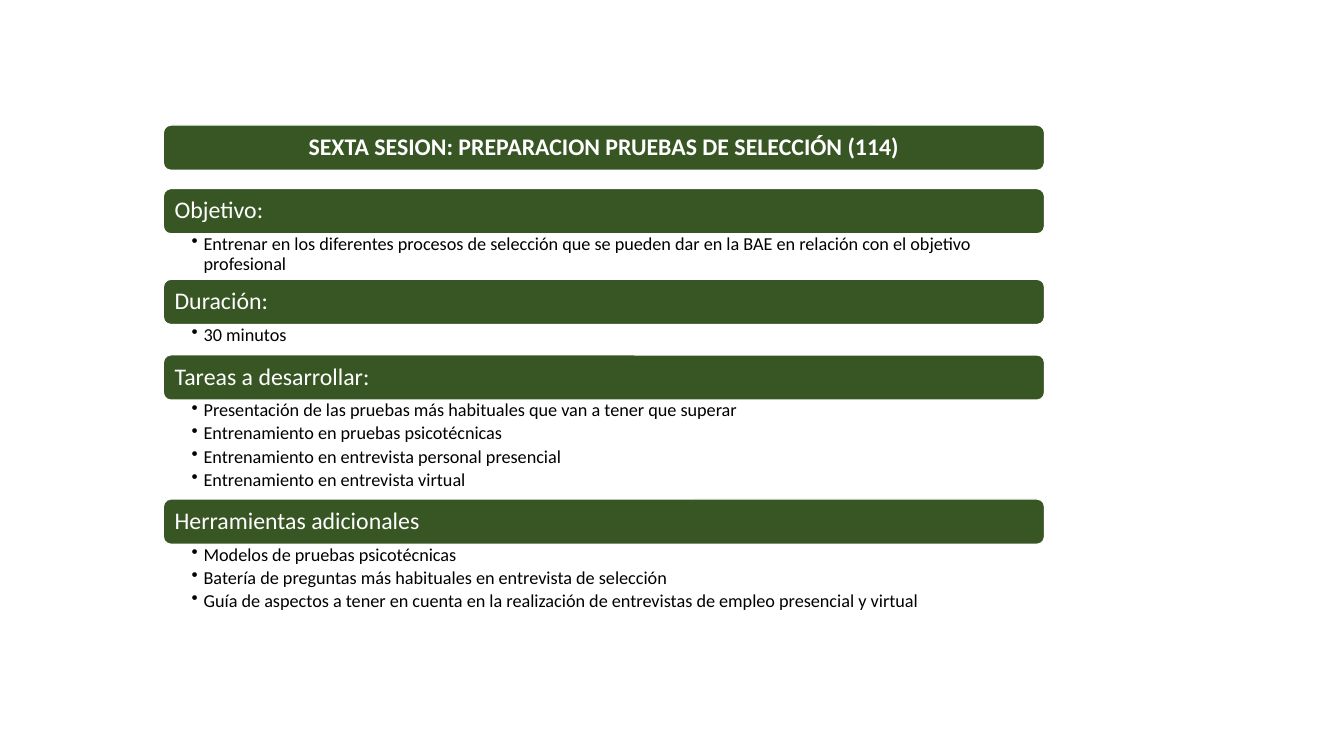
from lxml import etree
from pptx import Presentation
from pptx.dml.color import RGBColor
from pptx.enum import shapes, text
from pptx.oxml import ns
from pptx.util import Inches, Pt

GREEN = RGBColor(0x38, 0x56, 0x24)
WHITE = RGBColor(0xFF, 0xFF, 0xFF)
BLACK = RGBColor(0x00, 0x00, 0x00)

LEFT, WIDTH, BAR_HEIGHT = 1.62, 8.74, 0.45

# Top of the bar, heading, height of the bullet list, bullets
SECTIONS = [
    (1.87, "Objetivo:", 0.45, [
        "Entrenar en los diferentes procesos de selección que se pueden dar "
        "en la BAE en relación con el objetivo profesional",
    ]),
    (2.77, "Duración:", 0.31, ["30 minutos"]),
    (3.52, "Tareas a desarrollar:", 0.98, [
        "Presentación de las pruebas más habituales que van a tener que superar",
        "Entrenamiento en pruebas psicotécnicas",
        "Entrenamiento en entrevista personal presencial",
        "Entrenamiento en entrevista virtual",
    ]),
    (4.95, "Herramientas adicionales", 0.73, [
        "Modelos de pruebas psicotécnicas",
        "Batería de preguntas más habituales en entrevista de selección",
        "Guía de aspectos a tener en cuenta en la realización de entrevistas "
        "de empleo presencial y virtual",
    ]),
]

prs = Presentation()
prs.slide_width = Inches(13.33)
prs.slide_height = Inches(7.5)
s = prs.slides.add_slide(prs.slide_layouts[6])


def add_text(p, content, size, color, bold=False):
    p.line_spacing = 0.9
    r = p.add_run()
    r.text = content
    r.font.name = "Calibri"
    r.font.size = Pt(size)
    r.font.bold = bold
    r.font.color.rgb = color


def add_bar(top, heading, align=text.PP_ALIGN.LEFT, bold=False):
    sp = s.shapes.add_shape(
        shapes.MSO_SHAPE.ROUNDED_RECTANGLE,
        Inches(LEFT), Inches(top), Inches(WIDTH), Inches(BAR_HEIGHT))
    sp.shadow.inherit = False
    sp.fill.solid()
    sp.fill.fore_color.rgb = GREEN
    sp.line.color.rgb = WHITE
    sp.line.width = Pt(1)
    tf = sp.text_frame
    tf.word_wrap = True
    tf.vertical_anchor = text.MSO_ANCHOR.MIDDLE
    tf.margin_left = tf.margin_right = Inches(0.09)
    tf.margin_top = tf.margin_bottom = Inches(0.07)
    p = tf.paragraphs[0]
    p.alignment = align
    add_text(p, heading, 17, WHITE, bold)


add_bar(1.24, "SEXTA SESION: PREPARACION PRUEBAS DE SELECCIÓN (114)",
        text.PP_ALIGN.CENTER, bold=True)

for top, heading, list_height, bullets in SECTIONS:
    add_bar(top, heading)
    box = s.shapes.add_textbox(
        Inches(LEFT), Inches(top + BAR_HEIGHT - 0.01),
        Inches(WIDTH), Inches(list_height))
    tf = box.text_frame
    tf.word_wrap = True
    tf.margin_left, tf.margin_right = Inches(0.28), Inches(0.13)
    tf.margin_top = tf.margin_bottom = Inches(0.02)
    for i, bullet in enumerate(bullets):
        p = tf.add_paragraph() if i else tf.paragraphs[0]
        p.level = 1
        pPr = p._p.get_or_add_pPr()
        pPr.set("marL", str(Inches(0.12)))
        pPr.set("indent", str(-Inches(0.12)))
        etree.SubElement(pPr, ns.qn("a:buChar"), char="•")
        p.space_after = Pt(2.4)
        add_text(p, bullet, 13, BLACK)

prs.save("out.pptx")
